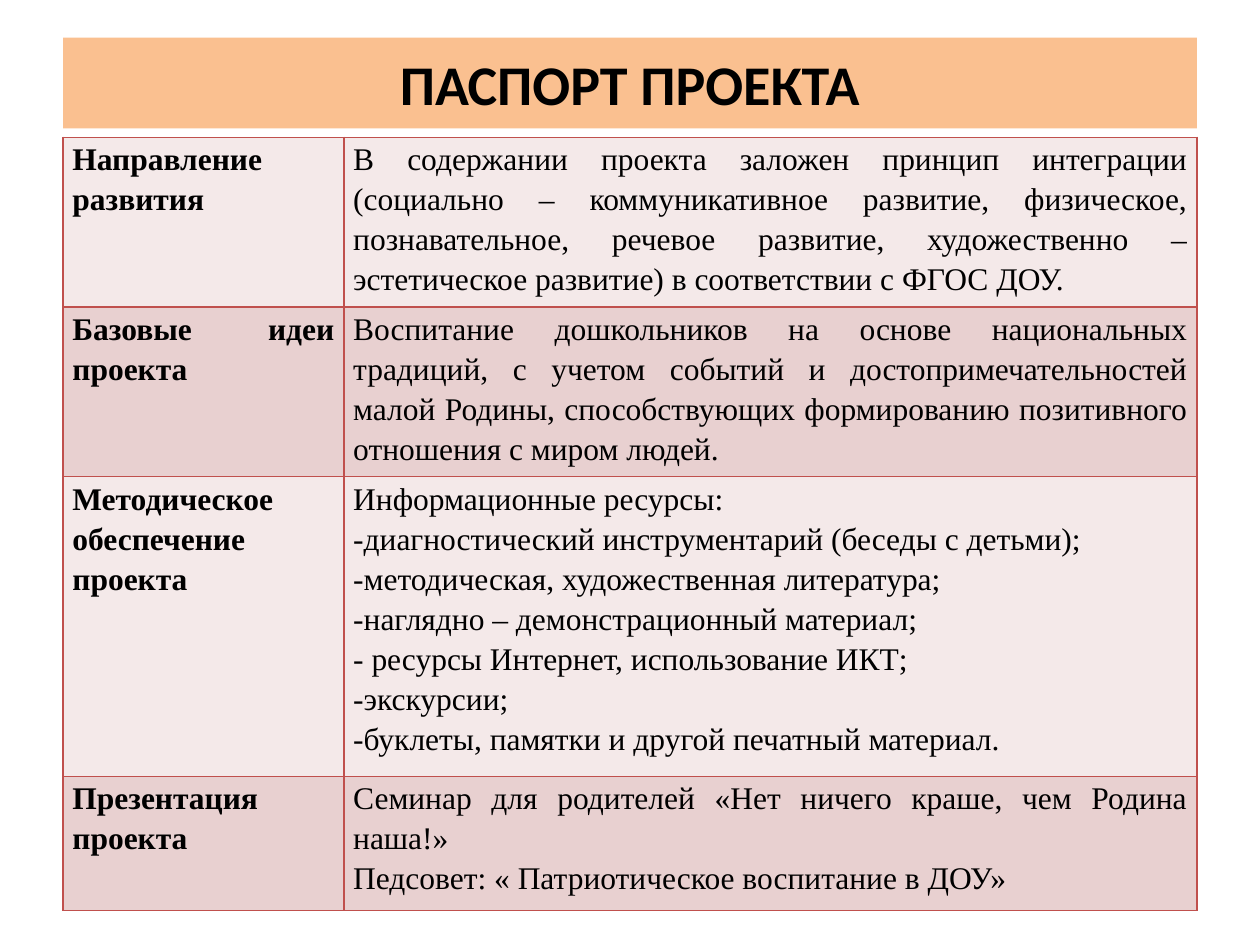
"""Build the project passport slide: a title band above a two-column table."""
from lxml.etree import SubElement as Sub
from pptx import Presentation
from pptx.dml.color import RGBColor as Rgb
from pptx.enum.text import MSO_ANCHOR as Anchor, PP_ALIGN as Align
from pptx.oxml.ns import qn
from pptx.util import Cm, Pt

TITLE = "ПАСПОРТ ПРОЕКТА"
ROWS = [
    ("Направление развития", [
        "В содержании проекта заложен принцип интеграции (социально – "
        "коммуникативное развитие, физическое, познавательное, речевое развитие, "
        "художественно – эстетическое развитие) в соответствии с ФГОС ДОУ.",
    ], 3.42),
    ("Базовые идеи проекта", [
        "Воспитание дошкольников на основе национальных традиций, с учетом событий "
        "и достопримечательностей малой Родины, способствующих формированию "
        "позитивного отношения с миром людей.",
    ], 3.42),
    ("Методическое обеспечение проекта", [
        "Информационные ресурсы:",
        "-диагностический инструментарий (беседы с детьми);",
        "-методическая, художественная литература;",
        "-наглядно – демонстрационный материал;",
        "- ресурсы Интернет, использование ИКТ;",
        "-экскурсии;",
        "-буклеты, памятки и другой печатный материал.",
    ], 6.04),
    ("Презентация проекта", [
        "Семинар для родителей «Нет ничего краше, чем Родина наша!»",
        "Педсовет: « Патриотическое воспитание в ДОУ»",
    ], 2.7),
]
THEME = {
    "band": "FAC090", "rows": ("F4E9E9", "E8D0D0"), "edge": "C0504D", "ink": "000000",
    "head": {"font": "Calibri", "size": 32},
    "body": {"font": "Times New Roman", "size": 18, "align": Align.JUSTIFY, "lead": 1.15},
}
LEFT, WIDTH = 1.27, 22.86
COLS = (5.66, WIDTH - 5.66)


def write(frame, lines, font, size, bold=False, align=Align.CENTER, lead=1.0):
    """Fill a text frame with one paragraph per line."""
    for i, line in enumerate(lines):
        para = frame.paragraphs[0] if i == 0 else frame.add_paragraph()
        para.alignment, para.line_spacing = align, lead
        run = para.add_run()
        run.text = line
        run.font.name, run.font.size, run.font.bold = font, Pt(size), bold
        run.font.color.rgb = Rgb.from_string(THEME["ink"])


def paint(shape, tint):
    """Give a shape or cell a solid fill."""
    shape.fill.solid()
    shape.fill.fore_color.rgb = Rgb.from_string(tint)


def edge(cell):
    """Draw a thin line on all four sides of a cell."""
    props = cell._tc.get_or_add_tcPr()
    for side in ("lnL", "lnR", "lnT", "lnB"):
        line = Sub(props, qn(f"a:{side}"), w=str(Pt(1)))
        Sub(Sub(line, qn("a:solidFill")), qn("a:srgbClr"), val=THEME["edge"])


def add_head(slide):
    """Place the title in its coloured band."""
    head = slide.shapes.title
    head.left, head.top, head.width, head.height = map(Cm, (LEFT, 0.76, WIDTH, 1.83))
    paint(head, THEME["band"])
    head.text_frame.vertical_anchor = Anchor.MIDDLE
    write(head.text_frame, [TITLE], bold=True, **THEME["head"])


def add_grid(slide):
    """Place the table of project facts."""
    high = sum(row[2] for row in ROWS)
    box = map(Cm, (LEFT, 2.77, WIDTH, high))
    grid = slide.shapes.add_table(len(ROWS), len(COLS), *box).table
    grid.first_row = grid.horz_banding = False
    for col, wide in zip(grid.columns, COLS):
        col.width = Cm(wide)
    for i, (name, lines, tall) in enumerate(ROWS):
        grid.rows[i].height = Cm(tall)
        for j, text in enumerate(([name], lines)):
            cell = grid.cell(i, j)
            cell.margin_left = cell.margin_right = Cm(0.19)
            cell.margin_top = cell.margin_bottom = 0
            edge(cell)
            paint(cell, THEME["rows"][i % 2])
            write(cell.text_frame, text, bold=j == 0, **THEME["body"])


def main():
    """Build and save the slide."""
    deck = Presentation()
    deck.slide_width, deck.slide_height = Cm(25.4), Cm(19.05)
    slide = deck.slides.add_slide(deck.slide_layouts[5])
    add_head(slide)
    add_grid(slide)
    deck.save("out.pptx")


if __name__ == "__main__":
    main()
